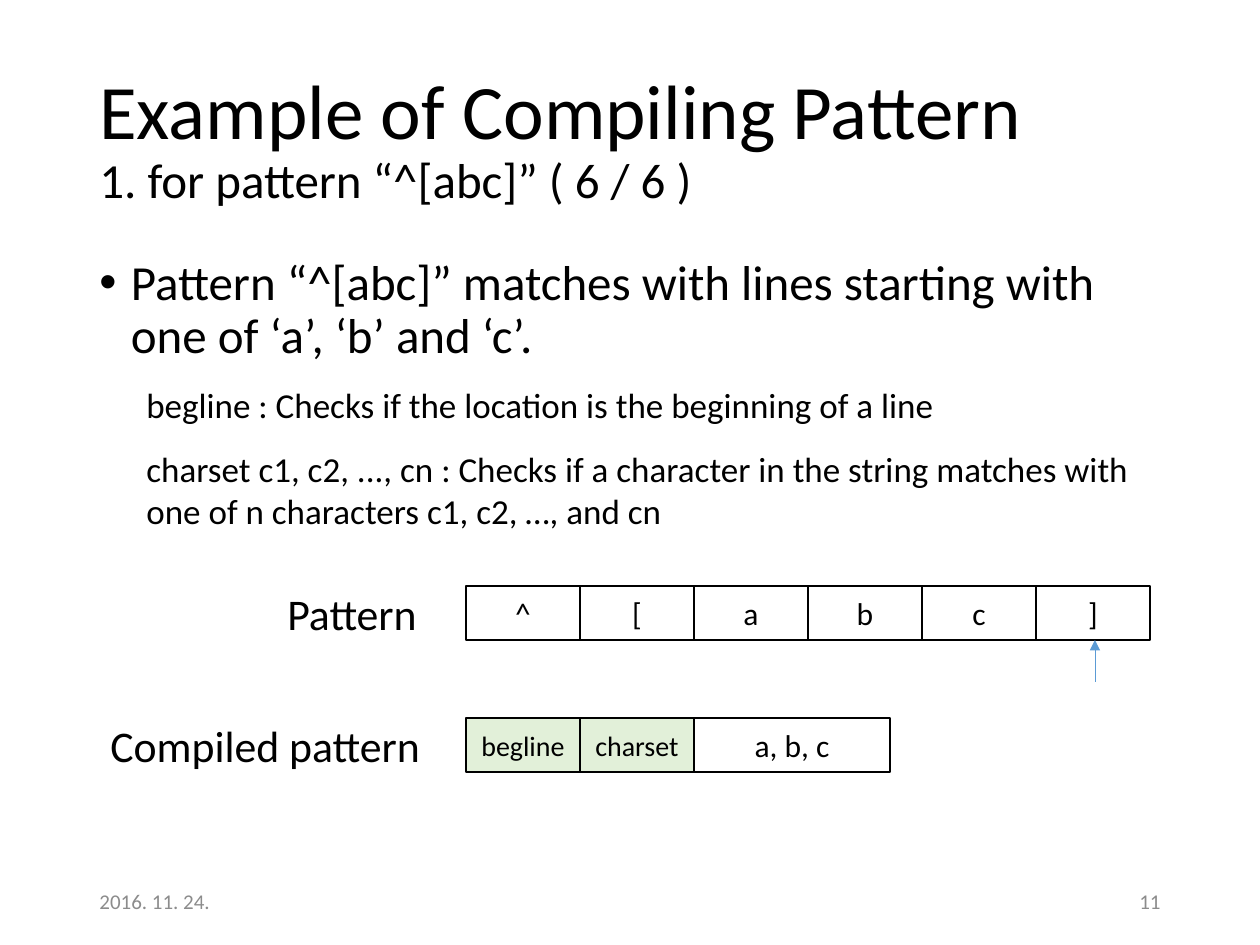
"""Build the slide on compiling the pattern ^[abc]."""
from lxml import etree
from pptx import Presentation
from pptx import util as u
from pptx.dml.color import RGBColor
from pptx.enum import shapes, text
from pptx.oxml.ns import qn

PX = 914400 // 126
BLACK, GREY, GREEN, BLUE = "000000", "8C8C8C", "E2F0D9", "5B9BD5"
TITLE = "Example of Compiling Pattern \n1. for pattern “^[abc]” ( 6 / 6 )"
BODY = "Pattern “^[abc]” matches with lines starting with one of ‘a’, ‘b’ and ‘c’."
NOTES = [
    ("begline : Checks if the location is the beginning of a line", (134, 377, 1034, 55)),
    ("charset c1, c2, ..., cn : Checks if a character in the string matches with \n"
     "one of n characters c1, c2, …, and cn", (134, 441, 1089, 97)),
]
LABELS = [("Pattern", (275, 581, 321, 66)), ("Compiled pattern", (98, 713, 367, 66))]
FOOT = [("2016. 11. 24.", 87, "LEFT"), ("11", 890, "RIGHT")]
LEFT, CELL, WIDE, HIGH = 466, 114, 196, 54
ROWS = [
    (586, [(c, CELL, 18, None) for c in "^[abc]"]),
    (718, [("begline", CELL, 16, GREEN), ("charset", CELL, 16, GREEN),
           ("a, b, c", WIDE, 18, None)]),
]


def px(*nums):
    return [u.Emu(n * PX) for n in nums]


def rgb(code):
    return RGBColor.from_string(code)


def write(shape, words, sizes, color=BLACK, align="LEFT", anchor="TOP"):
    frame = shape.text_frame
    frame.word_wrap = True
    frame.vertical_anchor = getattr(text.MSO_ANCHOR, anchor)
    para = frame.paragraphs[0]
    para.text = words
    para.alignment = getattr(text.PP_ALIGN, align)
    for i, run in enumerate(para.runs):
        run.font.size = u.Pt(sizes[min(i, len(sizes) - 1)])
        run.font.name = "Calibri"
        run.font.color.rgb = rgb(color)
    return para


def label(slide, words, box, *sizes, **look):
    return write(slide.shapes.add_textbox(*px(*box)), words, sizes, **look)


def cell(slide, words, box, size, fill):
    shape = slide.shapes.add_shape(shapes.MSO_SHAPE.RECTANGLE, *px(*box))
    shape.shadow.inherit = False
    if fill:
        shape.fill.solid()
        shape.fill.fore_color.rgb = rgb(fill)
    else:
        shape.fill.background()
    shape.line.color.rgb = rgb(BLACK)
    shape.line.width = u.Pt(1)
    write(shape, words, [size], align="CENTER", anchor="MIDDLE")


def bullet(para):
    props = para._p.get_or_add_pPr()
    props.set("marL", str(u.Inches(0.25)))
    props.set("indent", str(-u.Inches(0.25)))
    etree.SubElement(props, qn("a:buFont")).set("typeface", "Arial")
    etree.SubElement(props, qn("a:buChar")).set("char", "•")


def arrow(slide, *ends):
    line = slide.shapes.add_connector(shapes.MSO_CONNECTOR.STRAIGHT, *px(*ends))
    line.line.color.rgb = rgb(BLUE)
    line.line.width = u.Pt(0.5)
    etree.SubElement(line.line._get_or_add_ln(), qn("a:tailEnd")).set("type", "triangle")
    etree.SubElement(line._element.spPr, qn("a:effectLst"))


def main():
    deck = Presentation()
    deck.slide_width, deck.slide_height = px(1260, 945)
    slide = deck.slides.add_slide(deck.slide_layouts[6])
    head = label(slide, TITLE, (87, 50, 1086, 183), 44, 28, anchor="MIDDLE")
    head.line_spacing = 0.9
    body = label(slide, BODY, (87, 252, 1086, 600), 28)
    body.line_spacing = 0.9
    body.space_before = u.Pt(10)
    bullet(body)
    for words, box in NOTES:
        label(slide, words, box, 20)
    for words, box in LABELS:
        label(slide, words, box, 25)
    for words, x, side in FOOT:
        label(slide, words, (x, 876, 283, 50), 12, color=GREY, align=side, anchor="MIDDLE")
    for y, cells in ROWS:
        x = LEFT
        for words, wide, size, fill in cells:
            cell(slide, words, (x, y, wide, HIGH), size, fill)
            x += wide
    arrow(slide, 1095, 682, 1095, 640)
    deck.save("out.pptx")


if __name__ == "__main__":
    main()
